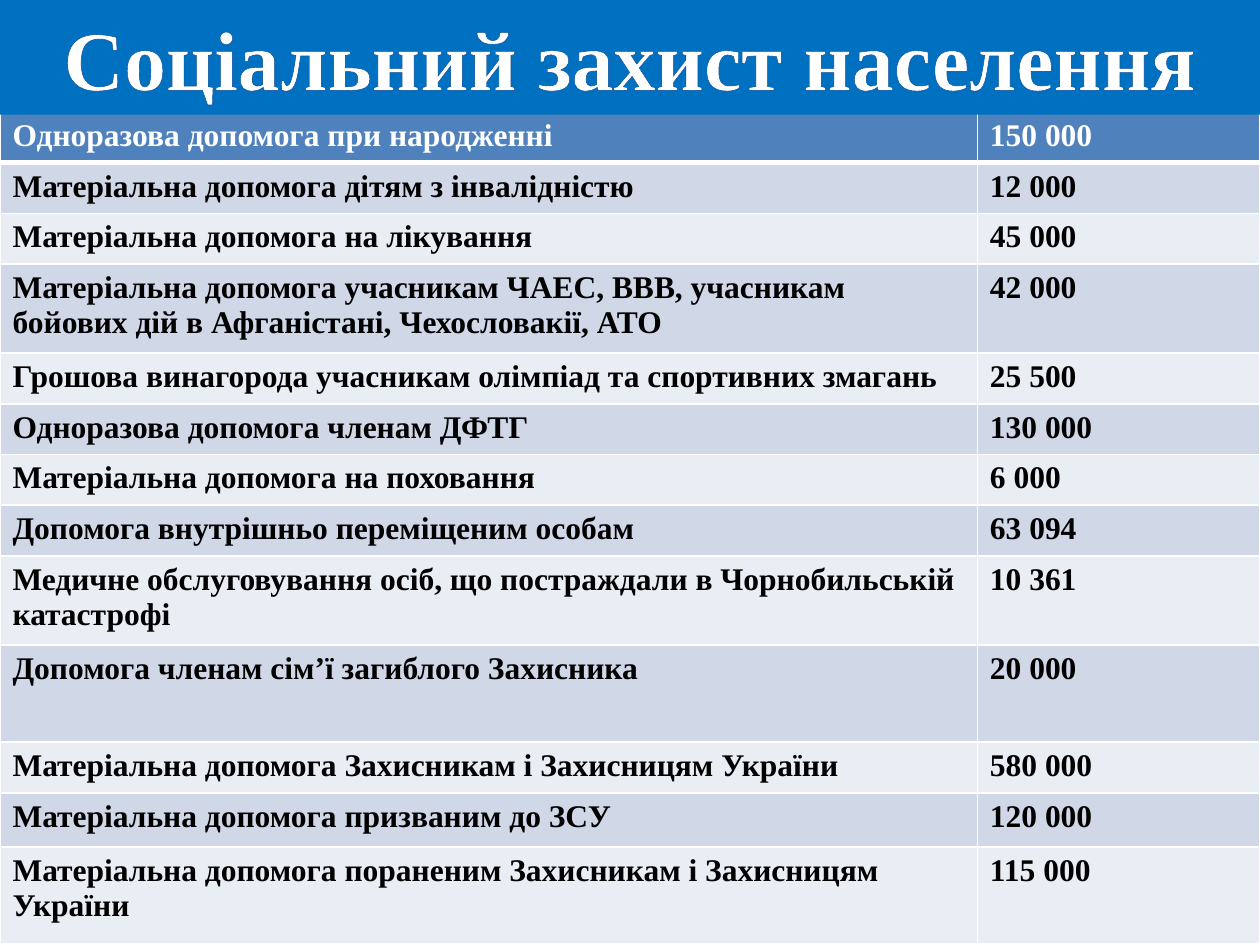
from dataclasses import dataclass

from lxml import etree
from pptx import Presentation
from pptx.dml.color import RGBColor
from pptx.enum import text
from pptx.oxml import ns
from pptx.util import Pt

WHITE = RGBColor(0xFF, 0xFF, 0xFF)
BLACK = RGBColor(0x00, 0x00, 0x00)
TITLE_BLUE = RGBColor(0x00, 0x70, 0xC0)
OUTLINE_BLUE = RGBColor(0x05, 0x46, 0x97)
HEADER_BLUE = RGBColor(0x4F, 0x81, 0xBD)
BANDS = (RGBColor(0xE9, 0xED, 0xF4), RGBColor(0xD0, 0xD8, 0xE8))

SLIDE_WIDTH, SLIDE_HEIGHT = Pt(720), Pt(540)
TITLE_HEIGHT = Pt(65.5)
TABLE_TOP = Pt(64)
COLUMN_WIDTHS = (Pt(558.5), Pt(161.5))
SINGLE, DOUBLE, TALL = 28.95, 51, 55.5
THIN, THICK = Pt(1), Pt(3)


@dataclass
class Payment:
    purpose: str
    amount: str
    height: float = SINGLE


PAYMENTS = [
    Payment("Одноразова допомога при народженні", "150 000"),
    Payment("Матеріальна допомога дітям з інвалідністю", "12 000"),
    Payment("Матеріальна допомога на лікування", "45 000"),
    Payment("Матеріальна допомога учасникам ЧАЕС, ВВВ, учасникам бойових дій "
            "в Афганістані, Чехословакії, АТО", "42 000", DOUBLE),
    Payment("Грошова винагорода учасникам олімпіад та спортивних змагань", "25 500"),
    Payment("Одноразова допомога членам ДФТГ", "130 000"),
    Payment("Матеріальна допомога на поховання", "6 000"),
    Payment("Допомога внутрішньо переміщеним особам", "63 094"),
    Payment("Медичне обслуговування осіб, що постраждали в Чорнобильській "
            "катастрофі", "10 361", DOUBLE),
    Payment("Допомога членам сім’ї загиблого Захисника", "20 000", TALL),
    Payment("Матеріальна допомога Захисникам і Захисницям України", "580 000"),
    Payment("Матеріальна допомога призваним до ЗСУ", "120 000", 31),
    Payment("Матеріальна допомога пораненим Захисникам і Захисницям України",
            "115 000", TALL),
]


def format_font(font, size: float, color: RGBColor) -> None:
    values = {"name": "Times New Roman", "size": Pt(size), "bold": True}
    for name, value in values.items():
        setattr(font, name, value)
    font.color.rgb = color


def make_line(tag: str, width: int, color: RGBColor):
    """Return a solid line element for a cell border or a text outline."""
    line = etree.Element(ns.qn(tag), w=str(int(width)))
    fill = etree.SubElement(line, ns.qn("a:solidFill"))
    etree.SubElement(fill, ns.qn("a:srgbClr"), val=str(color))
    return line


def set_borders(cell, top: int, bottom: int) -> None:
    properties = cell._tc.get_or_add_tcPr()
    widths = {"a:lnL": THIN, "a:lnR": THIN, "a:lnT": top, "a:lnB": bottom}
    for position, (tag, width) in enumerate(widths.items()):
        properties.insert(position, make_line(tag, width, WHITE))


def add_payments(slide, payments: list[Payment]) -> None:
    height = sum(Pt(payment.height) for payment in payments)
    table = slide.shapes.add_table(len(payments), len(COLUMN_WIDTHS), 0, TABLE_TOP,
                                   SLIDE_WIDTH, height).table
    for column, width in zip(table.columns, COLUMN_WIDTHS):
        column.width = width
    for index, (row, payment) in enumerate(zip(table.rows, payments)):
        row.height = Pt(payment.height)
        is_header = index == 0
        for cell, content in zip(row.cells, (payment.purpose, payment.amount)):
            cell.text = content
            cell.fill.solid()
            cell.fill.fore_color.rgb = HEADER_BLUE if is_header else BANDS[index % 2]
            format_font(cell.text_frame.paragraphs[0].runs[0].font, 18,
                        WHITE if is_header else BLACK)
            set_borders(cell, THICK if index == 1 else THIN,
                        THICK if is_header else THIN)


def format_title(slide, wording: str) -> None:
    """Fill the title placeholder and bring it in front of the table."""
    title = slide.shapes.title
    title.left, title.top, title.width, title.height = 0, 0, SLIDE_WIDTH, TITLE_HEIGHT
    title.fill.solid()
    title.fill.fore_color.rgb = TITLE_BLUE
    frame = title.text_frame
    frame.text = wording
    values = {"word_wrap": True, "vertical_anchor": text.MSO_ANCHOR.TOP,
              "auto_size": text.MSO_AUTO_SIZE.SHAPE_TO_FIT_TEXT}
    for name, value in values.items():
        setattr(frame, name, value)
    paragraph = frame.paragraphs[0]
    paragraph.alignment = text.PP_ALIGN.CENTER
    run = paragraph.runs[0]
    format_font(run.font, 48, WHITE)
    run._r.get_or_add_rPr().insert(0, make_line("a:ln", THIN, OUTLINE_BLUE))
    slide.shapes._spTree.append(title._element)


def main() -> None:
    presentation = Presentation()
    presentation.slide_width, presentation.slide_height = SLIDE_WIDTH, SLIDE_HEIGHT
    slide = presentation.slides.add_slide(presentation.slide_layouts[5])
    add_payments(slide, PAYMENTS)
    format_title(slide, "Соціальний захист населення")
    presentation.save("out.pptx")


if __name__ == "__main__":
    main()
